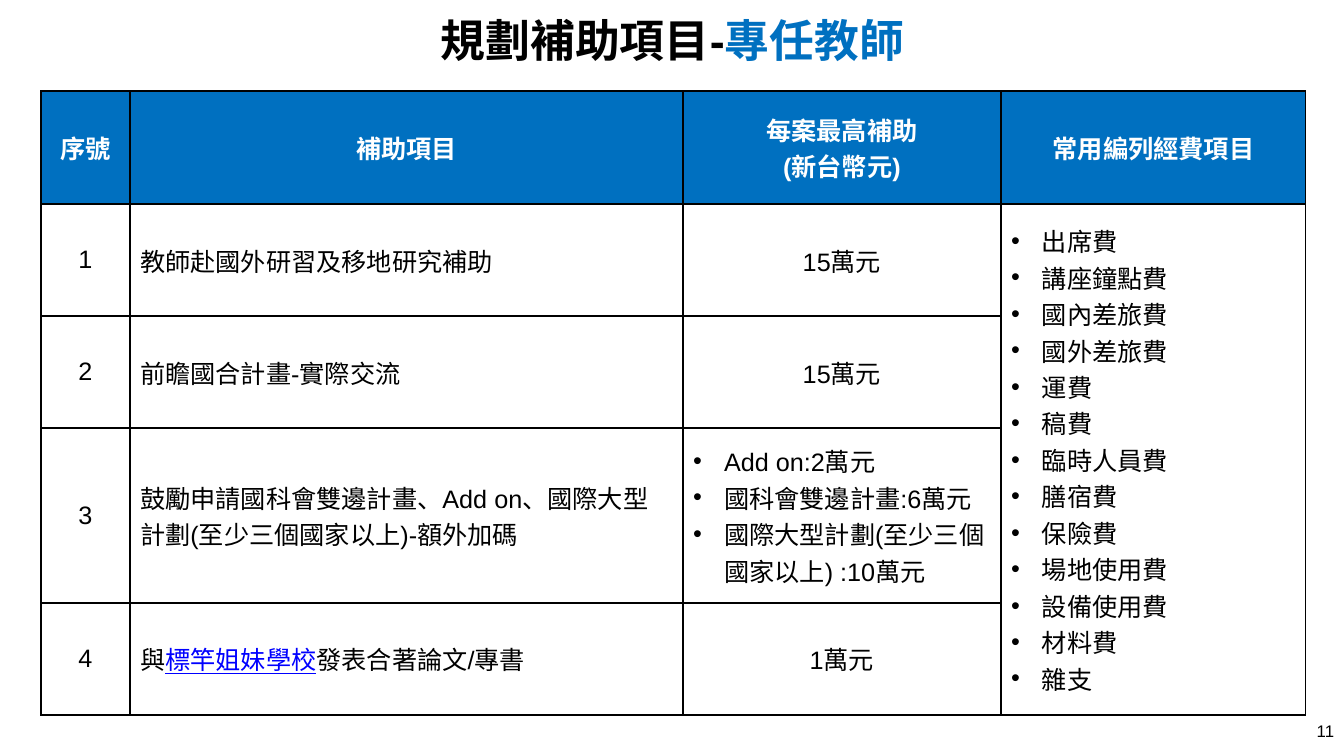
from lxml.etree import SubElement
from pptx import Presentation
from pptx.dml.color import RGBColor
from pptx.enum.text import MSO_ANCHOR as Anchor, PP_ALIGN as Align
from pptx.oxml.ns import qn
from pptx.util import Pt

PX = 12192000 / 1344
COLORS = {"black": "000000", "white": "FFFFFF", "blue": "0070C0", "link": "0000FF"}


def px(length):
    return round(length * PX)


def add_run(paragraph, text, size, color="black", bold=False, underline=False):
    run = paragraph.add_run()
    run.text = text
    font = run.font
    font.name, font.size, font.bold, font.underline = "Arial", Pt(size), bold, underline
    font.color.rgb = RGBColor.from_string(COLORS[color])


presentation = Presentation()
presentation.slide_width, presentation.slide_height = px(1344), px(756)
slide = presentation.slides.add_slide(presentation.slide_layouts[5])

# Title
title = slide.shapes.title
title.left, title.top, title.width, title.height = px(365), px(17), px(615), px(52)
title_frame = title.text_frame
title_frame.vertical_anchor = Anchor.MIDDLE
title_frame.margin_top = title_frame.margin_bottom = 0
paragraph = title_frame.paragraphs[0]
paragraph.alignment = Align.CENTER
paragraph.line_spacing = 0.9
add_run(paragraph, "規劃補助項目-", 32, bold=True)
add_run(paragraph, "專任教師", 32, "blue", bold=True)

# Table content: each cell is a list of lines
expenses = ["出席費", "講座鐘點費", "國內差旅費", "國外差旅費", "運費", "稿費", "臨時人員費",
            "膳宿費", "保險費", "場地使用費", "設備使用費", "材料費", "雜支"]
add_ons = ["Add on:2萬元", "國科會雙邊計畫:6萬元", "國際大型計劃(至少三個國家以上) :10萬元"]
partner_link = "標竿姐妹學校"
rows = [
    [["序號"], ["補助項目"], ["每案最高補助", "(新台幣元)"], ["常用編列經費項目"]],
    [["1"], ["教師赴國外研習及移地研究補助"], ["15萬元"], expenses],
    [["2"], ["前瞻國合計畫-實際交流"], ["15萬元"], []],
    [["3"], ["鼓勵申請國科會雙邊計畫、Add on、國際大型計劃(至少三個國家以上)-額外加碼"], add_ons, []],
    [["4"], [f"與{partner_link}發表合著論文/專書"], ["1萬元"], []],
]
column_widths = [89, 553, 318, 305]
row_heights = [113, 112, 112, 175, 112]

# Table grid
table = slide.shapes.add_table(len(rows), len(column_widths), px(41), px(91),
                               px(sum(column_widths)), px(sum(row_heights))).table
for column, width in zip(table.columns, column_widths):
    column.width = px(width)
for row, height in zip(table.rows, row_heights):
    row.height = px(height)
table.cell(1, 3).merge(table.cell(4, 3))

for row_index, row_cells in enumerate(rows):
    is_header = row_index == 0
    for column_index, lines in enumerate(row_cells):
        cell = table.cell(row_index, column_index)
        cell.vertical_anchor = Anchor.MIDDLE

        # Borders and fill
        properties = cell._tc.get_or_add_tcPr()
        for side in ("a:lnL", "a:lnR", "a:lnT", "a:lnB"):
            border = SubElement(properties, qn(side), w=str(Pt(1)))
            border_fill = SubElement(border, qn("a:solidFill"))
            SubElement(border_fill, qn("a:srgbClr"), val=COLORS["black"])
        cell.fill.solid()
        cell.fill.fore_color.rgb = RGBColor.from_string(COLORS["blue" if is_header else "white"])

        # Text
        is_list = not is_header and len(lines) > 1
        for line_index, line in enumerate(lines):
            frame = cell.text_frame
            paragraph = frame.add_paragraph() if line_index else frame.paragraphs[0]
            if is_list:
                bullet = paragraph._p.get_or_add_pPr()
                bullet.set("marL", str(px(31)))
                bullet.set("indent", str(-px(31)))
                SubElement(bullet, qn("a:buFont"), typeface="Arial")
                SubElement(bullet, qn("a:buChar"), char="•")
            elif is_header or column_index != 1:
                paragraph.alignment = Align.CENTER
            before, link, after = line.partition(partner_link)
            add_run(paragraph, before, 18, "white" if is_header else "black", bold=is_header)
            if link:
                add_run(paragraph, link, 18, "link", underline=True)
                add_run(paragraph, after, 18)

# Page number
page_frame = slide.shapes.add_textbox(px(1041), px(716), px(303), px(40)).text_frame
page_frame.word_wrap = True
paragraph = page_frame.paragraphs[0]
paragraph.alignment = Align.RIGHT
add_run(paragraph, "11", 12)

presentation.save("out.pptx")
